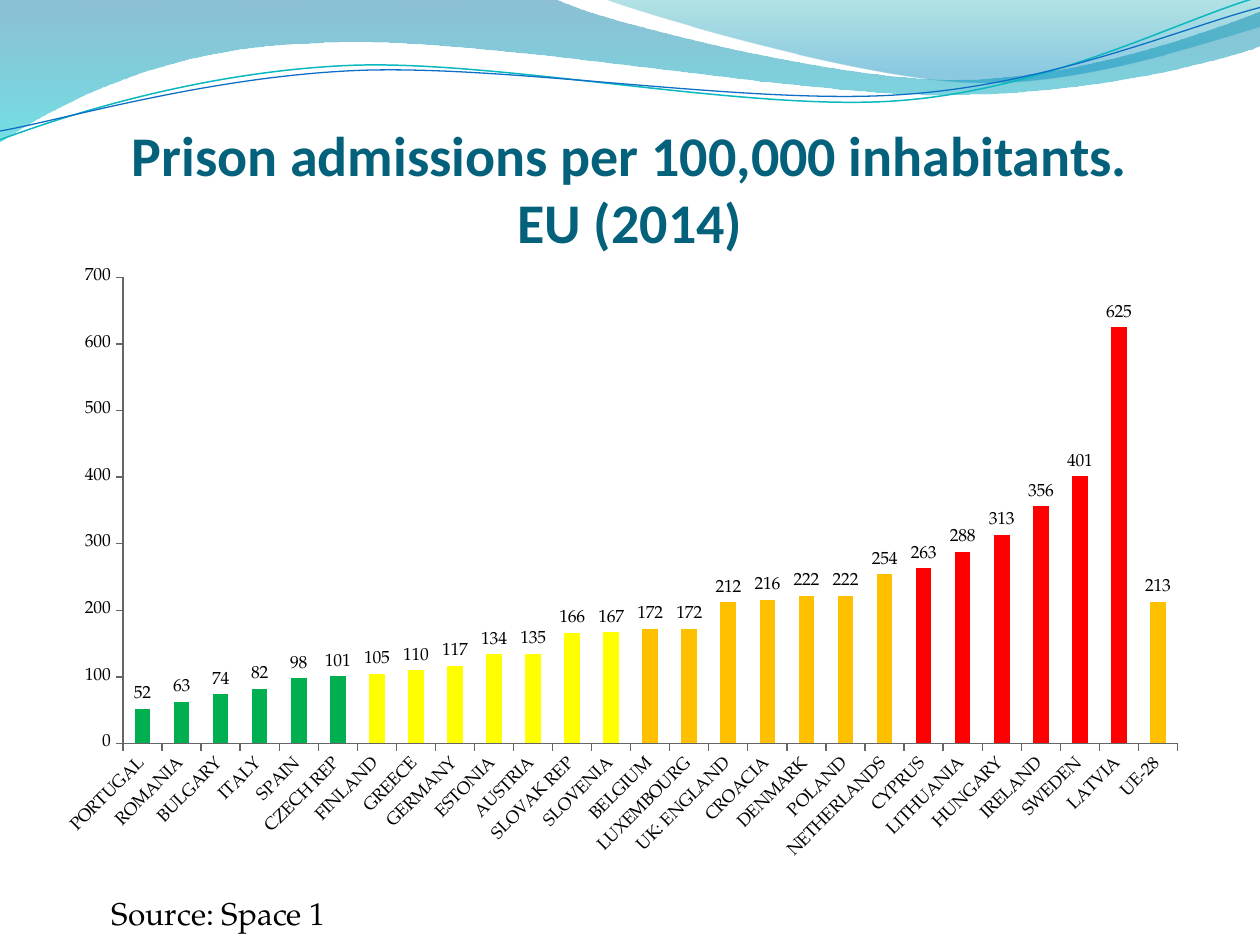
from lxml import etree
from pptx import Presentation
from pptx.chart.data import CategoryChartData
from pptx.dml.color import RGBColor
from pptx.enum.chart import XL_CHART_TYPE, XL_LABEL_POSITION, XL_TICK_MARK
from pptx.enum.text import MSO_ANCHOR, PP_ALIGN
from pptx.oxml import parse_xml
from pptx.oxml.ns import nsdecls, qn
from pptx.util import Inches, Pt

COLUMN = XL_CHART_TYPE.COLUMN_CLUSTERED
OUTSIDE_END = XL_LABEL_POSITION.OUTSIDE_END
TICK_OUTSIDE = XL_TICK_MARK.OUTSIDE
BOTTOM = MSO_ANCHOR.BOTTOM
CENTER = PP_ALIGN.CENTER

TITLE = "Prison admissions per 100,000 inhabitants.\vEU (2014)"
SOURCE = "Source: Space 1"
BODY_FONT = "TeX Gyre Pagella"
COLORS = {
    "title": "04617B", "text": "000000", "axis": "666666", "series": "0F6FC6",
    "green": "00B050", "yellow": "FFFF00", "orange": "FFC000", "red": "FF0000",
}
ADMISSIONS = [
    ("green", [("PORTUGAL", 52), ("ROMANIA", 63), ("BULGARY", 74), ("ITALY", 82),
               ("SPAIN", 98), ("CZECH REP", 101)]),
    ("yellow", [("FINLAND", 105), ("GREECE", 110), ("GERMANY", 117), ("ESTONIA", 134),
                ("AUSTRIA", 135), ("SLOVAK REP", 166), ("SLOVENIA", 167)]),
    ("orange", [("BELGIUM", 172), ("LUXEMBOURG", 172), ("UK: ENGLAND", 212), ("CROACIA", 216),
                ("DENMARK", 222), ("POLAND", 222), ("NETHERLANDS", 254)]),
    ("red", [("CYPRUS", 263), ("LITHUANIA", 288), ("HUNGARY", 313), ("IRELAND", 356),
             ("SWEDEN", 401), ("LATVIA", 625)]),
    ("orange", [("UE-28", 213)]),
]
PLOT_LAYOUT = {"x": 0.054, "y": 0.019, "w": 0.93, "h": 0.771}
WAVES = [
    {"start": (0, 0),
     "segments": [[(4.4, -0.01)], [(4.76, 0.17), (6.64, 0.63), (7.58, 0.63)],
                  [(8.53, 0.63), (9.58, 0.26), (10, 0.09)], [(10.01, 0.36)],
                  [(9.83, 0.44), (8.7, 0.76), (7.46, 0.75)],
                  [(6.22, 0.75), (3.82, 0.28), (2.57, 0.34)],
                  [(1.29, 0.36), (0.46, 0.83), (-0.01, 1.13)], [(0, 0)]],
     "gradient": [(0, "0074A1", 45), (1, "00C6CF", 55)]},
    {"start": (4.79, -0.01),
     "segments": [[(5.09, 0.11), (6.82, 0.62), (7.69, 0.65)],
                  [(8.56, 0.69), (9.61, 0.32), (10, 0.21)], [(10, 0)], [(4.79, -0.01)]],
     "gradient": [(0, "00A1A9", 30), (0.8, "008BBF", 45)]},
    {"start": (0, 1.11),
     "segments": [[(0.48, 0.93), (1.58, 0.57), (2.77, 0.52)],
                  [(3.95, 0.47), (5.93, 0.89), (7.13, 0.8)],
                  [(8.33, 0.71), (9.38, 0.15), (9.98, -0.02)]],
     "line": ("0AB8BF", 0.85)},
    {"start": (0, 1.04),
     "segments": [[(0.47, 0.96), (1.64, 0.61), (2.83, 0.56)],
                  [(4.03, 0.51), (5.97, 0.84), (7.17, 0.75)],
                  [(8.36, 0.67), (9.41, 0.21), (10, 0.06)]],
     "line": ("0F6FC6", 0.75)},
]


def rgb(value):
    return RGBColor.from_string(value)


def format_font(font, color, **values):
    for name, value in values.items():
        setattr(font, name, value)
    font.color.rgb = rgb(COLORS[color])


def place(shape, left, top, width, height):
    for name, value in zip(("left", "top", "width", "height"), (left, top, width, height)):
        setattr(shape, name, Inches(value))


def bend_segments(shape, segments):
    lines = iter(list(shape.element.iter(qn("a:lnTo"))))
    for segment in segments:
        first, *others = [next(lines) for _ in segment]
        if others:
            first.tag = qn("a:cubicBezTo")
            for line in others:
                first.append(line[0])
                line.getparent().remove(line)


def add_wave(slide, wave):
    start_x, start_y = wave["start"]
    points = [(Inches(x), Inches(y)) for segment in wave["segments"] for x, y in segment]
    builder = slide.shapes.build_freeform(Inches(start_x), Inches(start_y))
    builder.add_line_segments(points, close="gradient" in wave)
    shape = builder.convert_to_shape()
    bend_segments(shape, wave["segments"])
    shape.shadow.inherit = False
    if "line" in wave:
        color, width = wave["line"]
        shape.fill.background()
        shape.line.color.rgb = rgb(color)
        shape.line.width = Pt(width)
        return
    shape.line.fill.background()
    shape.fill.gradient()
    shape.fill.gradient_angle = 270
    for stop, (position, color, _) in zip(shape.fill.gradient_stops, wave["gradient"]):
        stop.position = position
        stop.color.rgb = rgb(color)
    gradient_colors = shape.element.spPr.iter(qn("a:srgbClr"))
    for element, (_, _, opacity) in zip(gradient_colors, wave["gradient"]):
        etree.SubElement(element, qn("a:alpha")).set("val", str(opacity * 1000))


def add_title(slide):
    title = slide.shapes.title
    place(title, 0.5, 0.77, 9, 1.25)
    frame = title.text_frame
    frame.text = TITLE
    margins = {"margin_left": 0, "margin_top": Inches(0.05), "margin_right": 0, "margin_bottom": 0}
    for name, value in {**margins, "vertical_anchor": BOTTOM, "word_wrap": True}.items():
        setattr(frame, name, value)
    paragraph = frame.paragraphs[0]
    paragraph.alignment = CENTER
    for run in paragraph.runs:
        format_font(run.font, "title", name="Calibri", size=Pt(32), bold=True)


def add_source(slide):
    box = slide.shapes.add_textbox(Inches(0.79), Inches(7.05), Inches(2.36), Inches(0.4))
    box.text_frame.word_wrap = True
    box.text_frame.text = SOURCE
    format_font(box.text_frame.paragraphs[0].runs[0].font, "text", name=BODY_FONT, size=Pt(18))


def add_admissions_chart(slide):
    bars = [(country, value, color) for color, group in ADMISSIONS for country, value in group]
    data = CategoryChartData(number_format="0")
    data.categories = [country for country, _, _ in bars]
    data.add_series("Series 1", [value for _, value, _ in bars])
    chart = slide.shapes.add_chart(
        COLUMN, Inches(0.49), Inches(2.11), Inches(9), Inches(4.8), data).chart
    chart.has_legend = False
    chart.has_title = False
    format_font(chart.font, "text", name=BODY_FONT, size=Pt(10))

    for axis in (chart.category_axis, chart.value_axis):
        axis.has_major_gridlines = False
        axis.major_tick_mark = TICK_OUTSIDE
        axis.format.line.color.rgb = rgb(COLORS["axis"])
        format_font(axis.tick_labels.font, "text", name=BODY_FONT, size=Pt(10))
    category_text = chart.category_axis._element.find(qn("c:txPr"))
    category_text.find(qn("a:bodyPr")).set("rot", "-2700000")

    plot = chart.plots[0]
    plot.gap_width = 150
    plot.vary_by_categories = False
    series = plot.series[0]
    series.format.fill.solid()
    series.format.fill.fore_color.rgb = rgb(COLORS["series"])
    for index, (_, _, color) in enumerate(bars):
        fill = series.points[index].format.fill
        fill.solid()
        fill.fore_color.rgb = rgb(COLORS[color])
    labels = series.data_labels
    label_format = {"show_value": True, "number_format": "0",
                    "number_format_is_linked": False, "position": OUTSIDE_END}
    for name, value in label_format.items():
        setattr(labels, name, value)
    format_font(labels.font, "text", name=BODY_FONT, size=Pt(10))

    plot_area = chart.element.find(".//" + qn("c:plotArea"))
    for layout in plot_area.findall(qn("c:layout")):
        plot_area.remove(layout)
    sizes = "".join(f'<c:{name} val="{value}"/>' for name, value in PLOT_LAYOUT.items())
    plot_area.insert(0, parse_xml(
        f'<c:layout {nsdecls("c")}><c:manualLayout><c:layoutTarget val="inner"/>'
        f'<c:xMode val="edge"/><c:yMode val="edge"/>{sizes}</c:manualLayout></c:layout>'))


def main():
    presentation = Presentation()
    presentation.slide_width = Inches(10)
    presentation.slide_height = Inches(7.5)
    slide = presentation.slides.add_slide(presentation.slide_layouts[5])
    for wave in WAVES:
        add_wave(slide, wave)
    add_title(slide)
    add_source(slide)
    add_admissions_chart(slide)
    presentation.save("out.pptx")


if __name__ == "__main__":
    main()
